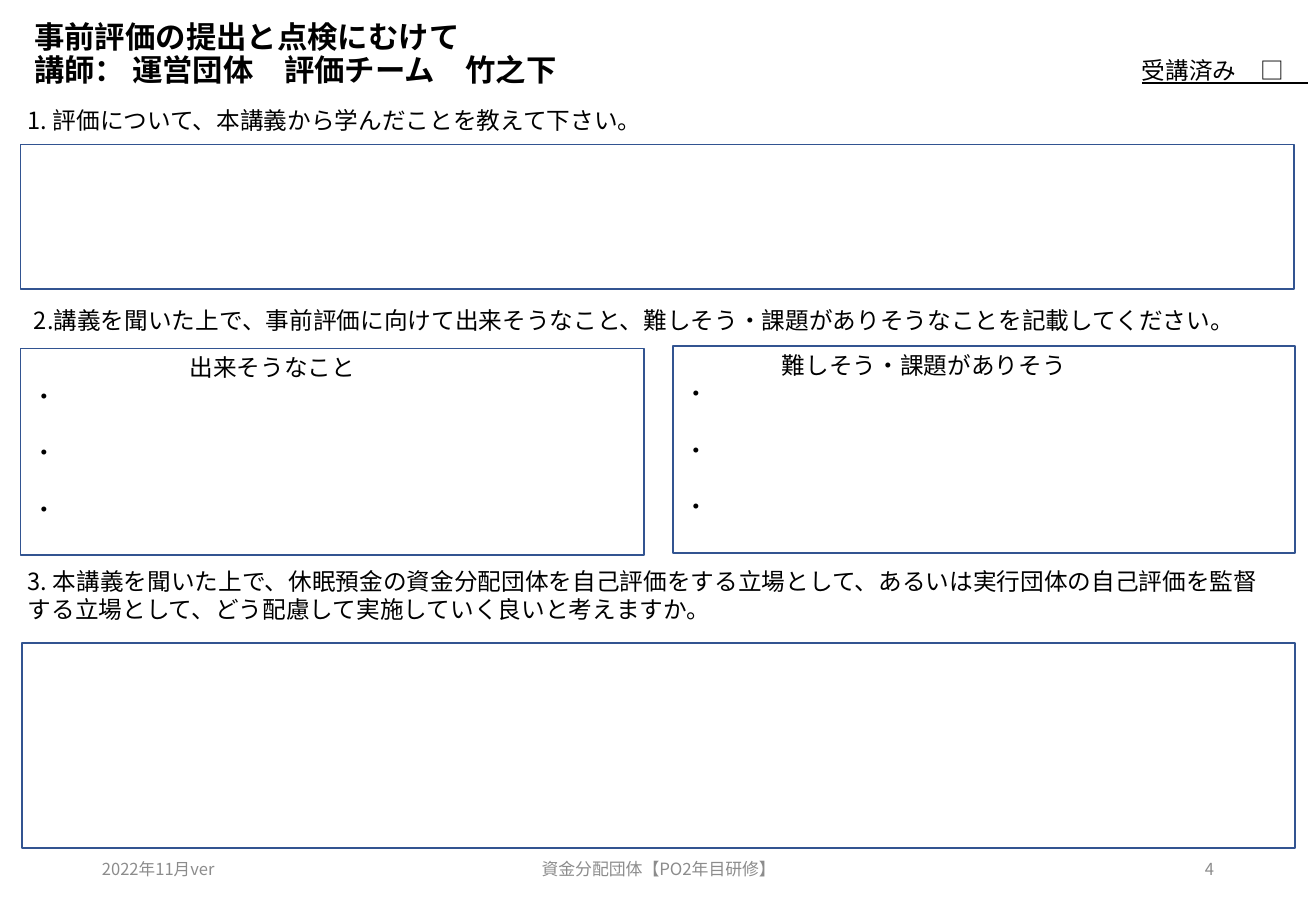
"""Build a one-page lecture worksheet with three questions and answer boxes."""
from lxml.etree import SubElement
from pptx import Presentation
from pptx.dml.color import RGBColor
from pptx.enum.shapes import MSO_SHAPE as Shape
from pptx.enum.text import MSO_ANCHOR as Anchor, MSO_AUTO_SIZE as AutoSize, PP_ALIGN as Align
from pptx.oxml.ns import qn
from pptx.util import Cm, Pt

FONT = "Noto Sans CJK JP"
BLACK = RGBColor(0x00, 0x00, 0x00)
GRAY = RGBColor(0x8C, 0x8C, 0x8C)
BLUE = RGBColor(0x32, 0x54, 0x91)
WHITE = RGBColor(0xFF, 0xFF, 0xFF)


def style(paragraph, size, color=BLACK, align=Align.LEFT):
    paragraph.alignment = align
    paragraph.font.size = Pt(size)
    paragraph.font.name = FONT
    paragraph.font.color.rgb = color
    SubElement(paragraph._p.pPr.find(qn("a:defRPr")), qn("a:ea"), typeface=FONT)


def add_label(text, left, top, width, height, size=14, color=BLACK, align=Align.LEFT):
    label = slide.shapes.add_textbox(Cm(left), Cm(top), Cm(width), Cm(height))
    label.text_frame.word_wrap = True
    label.text_frame.text = text
    style(label.text_frame.paragraphs[0], size, color, align)
    return label.text_frame


prs = Presentation()
prs.slide_width, prs.slide_height = Cm(27.51), Cm(19.05)
slide = prs.slides.add_slide(prs.slide_layouts[5])

title = slide.shapes.title
title.left, title.top, title.width, title.height = Cm(0.46), Cm(-0.1), Cm(25.2), Cm(2.51)
title.text_frame.text = "事前評価の提出と点検にむけて\v講師： 運営団体　評価チーム　竹之下"
title.text_frame.auto_size = AutoSize.NONE
title.text_frame.vertical_anchor = Anchor.MIDDLE
heading = title.text_frame.paragraphs[0]
style(heading, 18)
heading.line_spacing = 0.9
heading.font.bold = True

questions = [
    ("1. 評価について、本講義から学んだことを教えて下さい。", 0.33, 2.08, 26.4, 0.86),
    ("2.講義を聞いた上で、事前評価に向けて出来そうなこと、難しそう・課題がありそうなことを記載してください。",
     0.46, 6.27, 26.62, 0.86),
    ("3. 本講義を聞いた上で、休眠預金の資金分配団体を自己評価をする立場として、"
     "あるいは実行団体の自己評価を監督する立場として、どう配慮して実施していく良いと考えますか。",
     0.33, 11.73, 26.62, 1.45),
]
for question in questions:
    add_label(*question)

attended = add_label("受講済み　□　", 23.62, 1.04, 5.11, 0.86)
attended.paragraphs[0].font.underline = True

answers = [
    ("", 0.43, 3.02, 26.62, 3.02),
    ("出来そうなこと", 0.43, 7.29, 13.03, 4.32),
    ("難しそう・課題がありそう", 14.07, 7.24, 13, 4.32),
    ("", 0.46, 13.44, 26.62, 4.29),
]
for topic, left, top, width, height in answers:
    box = slide.shapes.add_shape(Shape.RECTANGLE, Cm(left), Cm(top), Cm(width), Cm(height))
    box.shadow.inherit = False
    box.fill.solid()
    box.fill.fore_color.rgb = WHITE
    box.line.color.rgb = BLUE
    box.line.width = Pt(1)
    if not topic:
        continue
    frame = box.text_frame
    frame.text = "\n".join([topic, "・", "・", "・"])
    frame.vertical_anchor = Anchor.TOP
    frame.margin_top = Cm(0.1)
    topic_line, *points = frame.paragraphs
    style(topic_line, 14, align=Align.CENTER)
    topic_line._p.pPr.set("marR", str(Cm(2.5)))
    for point in points:
        style(point, 14)
        point.space_after = Pt(16.7)

footers = [
    ("2022年11月ver", 1.88, 6.2, 9.8, Align.LEFT),
    ("資金分配団体【PO2年目研修】", 9.12, 9.3, 10, Align.CENTER),
    ("4", 19.43, 6.2, 9.8, Align.RIGHT),
]
for text, left, width, size, align in footers:
    footer = add_label(text, left, 17.65, width, 1.02, size, GRAY, align)
    footer.vertical_anchor = Anchor.MIDDLE

prs.save("out.pptx")
